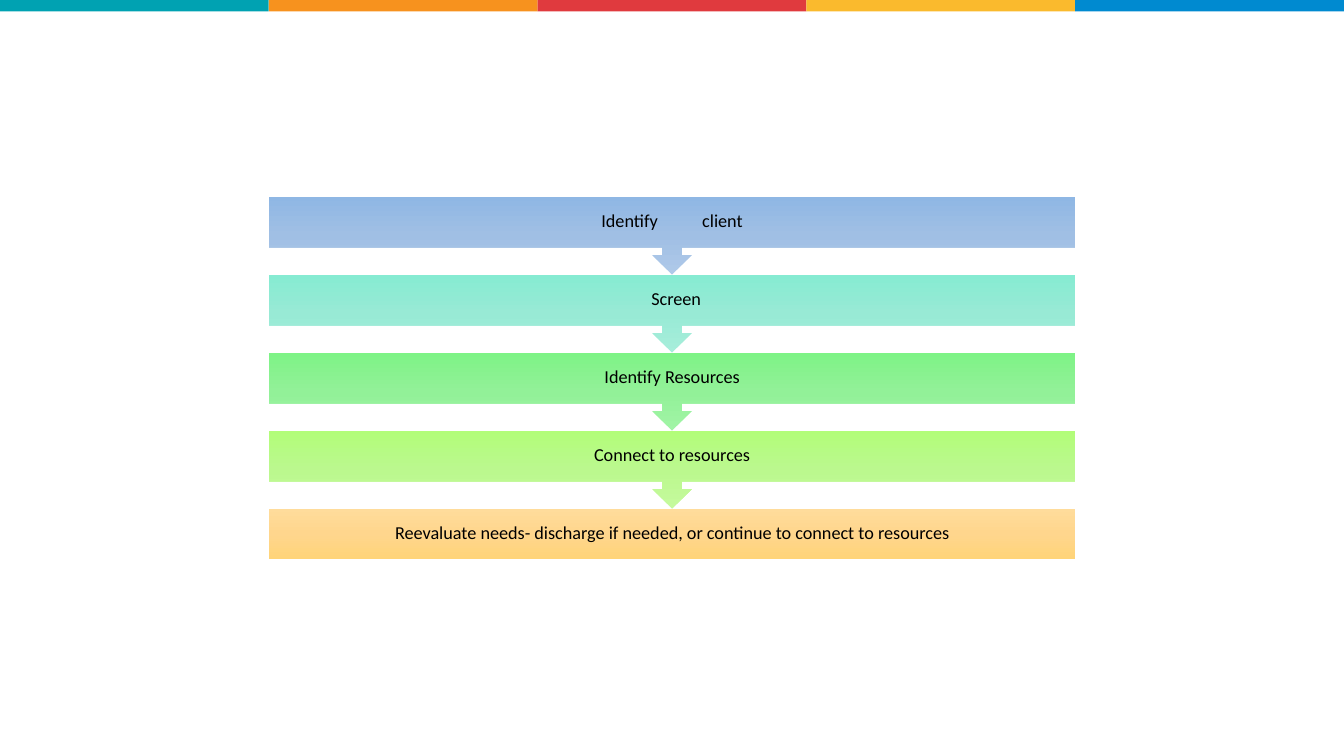
import copy

import pptx
import pptx.dml.color
import pptx.enum.shapes
import pptx.enum.text
import pptx.oxml.ns
import pptx.util

RGB = pptx.dml.color.RGBColor
SHAPE = pptx.enum.shapes.MSO_SHAPE

TEAL = RGB(0x00, 0xA2, 0xB2)
ORANGE = RGB(0xF7, 0x92, 0x1E)
RED = RGB(0xE0, 0x3A, 0x3E)
YELLOW = RGB(0xFA, 0xBA, 0x2D)
BLUE = RGB(0x00, 0x8A, 0xD0)
BLACK = RGB(0x00, 0x00, 0x00)
SKY_BLEND = (RGB(0xAF, 0xC9, 0xE9), RGB(0xA0, 0xBF, 0xE4), RGB(0x8F, 0xB7, 0xE4))
AQUA_BLEND = (RGB(0xA7, 0xEE, 0xDB), RGB(0x98, 0xEA, 0xD5), RGB(0x86, 0xEB, 0xD2))
GREEN_BLEND = (RGB(0xA1, 0xF4, 0xA6), RGB(0x92, 0xF1, 0x98), RGB(0x7E, 0xF3, 0x86))
LIME_BLEND = (RGB(0xC5, 0xFA, 0x9D), RGB(0xBB, 0xF8, 0x8E), RGB(0xB2, 0xFD, 0x79))
AMBER_BLEND = (RGB(0xFF, 0xDC, 0x9B), RGB(0xFF, 0xD6, 0x8D), RGB(0xFF, 0xD4, 0x78))

SLIDE_WIDTH = pptx.util.Inches(13.33)
SLIDE_HEIGHT = pptx.util.Inches(7.5)
COLUMN = SLIDE_WIDTH / 5
STRIPE_COLORS = (TEAL, ORANGE, RED, YELLOW, BLUE)
BODY_SHARE = 0.65
STEPS = (
    ("Identify\tclient", SKY_BLEND, 0),
    ("Screen", AQUA_BLEND, 0.08),
    ("Identify Resources", GREEN_BLEND, 0),
    ("Connect to resources", LIME_BLEND, 0),
    ("Reevaluate needs- discharge if needed, or continue to connect to resources", AMBER_BLEND, 0),
)


def add_block(slide, preset, box):
    """Add a preset shape without outline or shadow."""
    block = slide.shapes.add_shape(preset, *(round(length) for length in box))
    block.shadow.inherit = False
    block.line.fill.background()
    return block


def blend(block, colors):
    """Fill a block with an even top-to-bottom gradient."""
    block.fill.gradient()
    block.fill.gradient_angle = 270
    first_stop = block.element.spPr.find(".//" + pptx.oxml.ns.qn("a:gs"))
    first_stop.addnext(copy.deepcopy(first_stop))
    for position, (stop, color) in enumerate(zip(block.fill.gradient_stops, colors)):
        stop.position = position / (len(colors) - 1)
        stop.color.rgb = color


def add_text(slide, text, box, size=13, font="Calibri", color=BLACK, shift=0):
    """Add a centred label, moved right by extra left inset."""
    label = slide.shapes.add_textbox(*(round(length) for length in box))
    frame = label.text_frame
    frame.word_wrap = True
    frame.vertical_anchor = pptx.enum.text.MSO_ANCHOR.MIDDLE
    inset = pptx.util.Inches(0.1)
    frame.margin_top = frame.margin_right = frame.margin_bottom = inset
    frame.margin_left = inset + pptx.util.Inches(shift)
    paragraph = frame.paragraphs[0]
    paragraph.alignment = pptx.enum.text.PP_ALIGN.CENTER
    paragraph.line_spacing = 0.9
    run = paragraph.add_run()
    run.text = text
    run.font.size = pptx.util.Pt(size)
    run.font.name = font
    run.font.color.rgb = color


def add_stripe(slide, left, top, width, height):
    """Draw the row of equal colour bands."""
    band = width / len(STRIPE_COLORS)
    for column, color in enumerate(STRIPE_COLORS):
        block = add_block(slide, SHAPE.RECTANGLE, (left + column * band, top, band, height))
        block.fill.solid()
        block.fill.fore_color.rgb = color


def add_process(slide, left, top, width, height):
    """Draw the steps from last to first, each pointing to the next."""
    last = len(STEPS) - 1
    pitch = height / (last + BODY_SHARE)
    body = pitch * BODY_SHARE
    for row in range(last, -1, -1):
        text, colors, shift = STEPS[row]
        row_top = top + row * pitch
        if row == last:
            step = add_block(slide, SHAPE.RECTANGLE, (left, row_top, width, body))
        else:
            step = add_block(slide, SHAPE.UP_ARROW_CALLOUT, (left, row_top, width, pitch))
            step.rotation = 180
            for index, share in enumerate((0.25, 0.25, 0.25, BODY_SHARE)):
                step.adjustments[index] = share
        blend(step, colors)
        add_text(slide, text, (left, row_top, width, body), shift=shift)


def main():
    """Build and save the slide."""
    presentation = pptx.Presentation()
    presentation.slide_width = SLIDE_WIDTH
    presentation.slide_height = SLIDE_HEIGHT
    slide = presentation.slides.add_slide(presentation.slide_layouts[6])
    add_stripe(slide, 0, 0, SLIDE_WIDTH, SLIDE_HEIGHT * 0.015)
    add_process(slide, COLUMN, SLIDE_HEIGHT * 0.26, COLUMN * 3, SLIDE_HEIGHT * 0.48)
    presentation.save("out.pptx")


if __name__ == "__main__":
    main()
